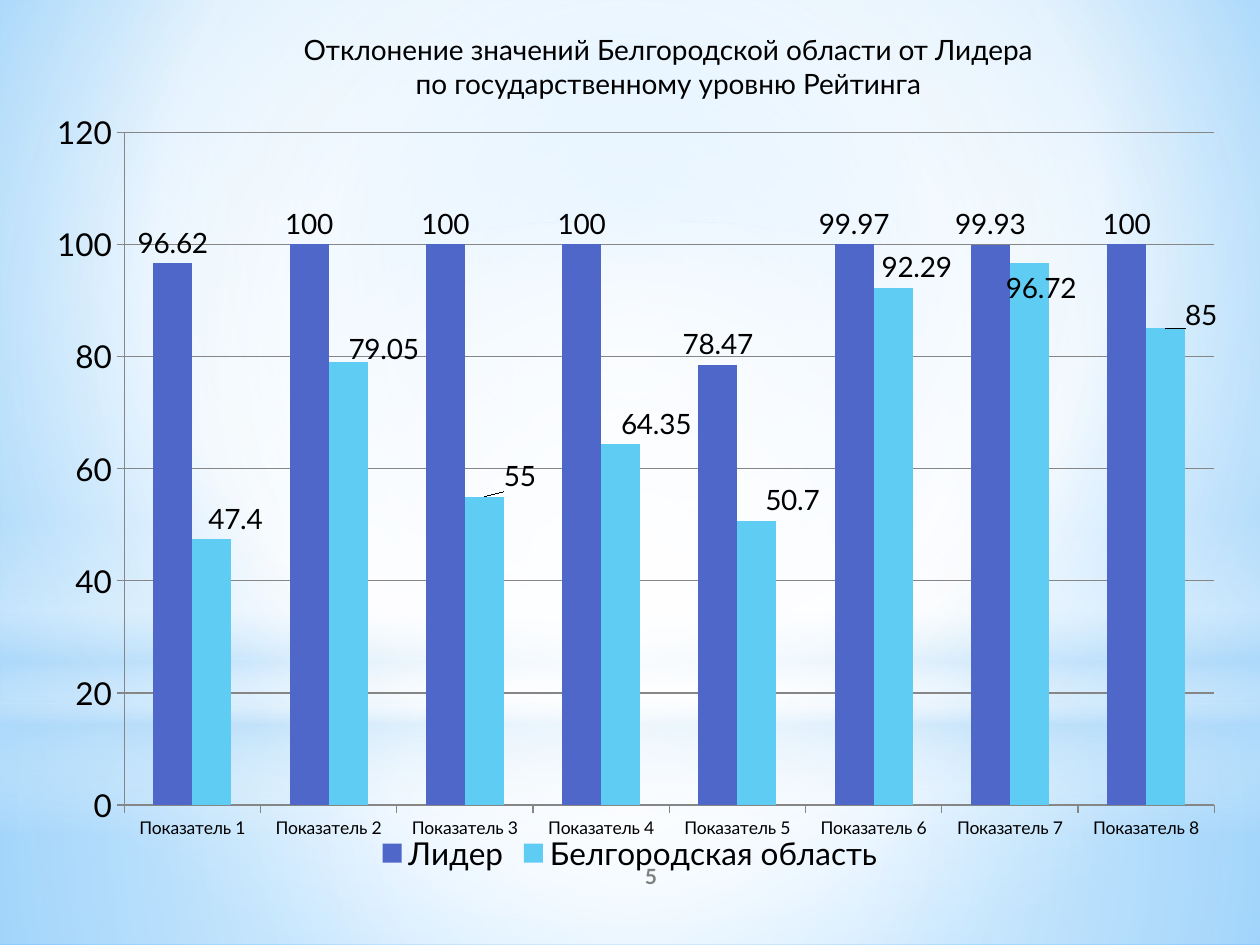
"""Build a slide comparing the region with the rating leader in a column chart."""
from lxml.etree import SubElement
from pptx import Presentation
from pptx.chart.data import CategoryChartData
from pptx.dml.color import RGBColor
from pptx.enum.chart import XL_CHART_TYPE as ChartType, XL_LABEL_POSITION as LabelPosition
from pptx.enum.chart import XL_LEGEND_POSITION as LegendPosition, XL_TICK_MARK as TickMark
from pptx.enum.shapes import MSO_SHAPE as Preset
from pptx.enum.text import MSO_ANCHOR as Anchor, MSO_AUTO_SIZE as AutoSize, PP_ALIGN as Align
from pptx.oxml.ns import qn
from pptx.util import Pt

WIDTH, HEIGHT = 720, 540
CENTRE = (50, 50, 50, 50)
LEADER = [96.62, 100, 100, 100, 78.47, 99.97, 99.93, 100]
REGION = [47.4, 79.05, 55, 64.35, 50.7, 92.29, 96.72, 85]
REGION_LABEL_SHIFTS = [(0.02, 0), (0.03, 0.01), (0.03, 0), (0.03, 0),
                       (0.03, 0), (0.02, 0), (0.01, 0.06), (0.03, 0.01)]


def colour(value):
    return RGBColor.from_string(value)


def add_node(parent, tag, **attributes):
    return SubElement(parent, qn(tag), {key: str(value) for key, value in attributes.items()})


def replace_with_gradient(owner, stops, focus=None):
    solid = owner.find(qn("a:solidFill"))
    gradient = add_node(owner, "a:gradFill", rotWithShape=1)
    owner.replace(solid, gradient)
    stop_list = add_node(gradient, "a:gsLst")
    for position, value, opacity in stops:
        stop = add_node(stop_list, "a:gs", pos=position * 1000)
        tint = add_node(stop, "a:srgbClr", val=value)
        if opacity < 100:
            add_node(tint, "a:alpha", val=opacity * 1000)
    if focus:
        sides = {side: amount * 1000 for side, amount in zip("ltrb", focus)}
        add_node(add_node(gradient, "a:path", path="circle"), "a:fillToRect", **sides)
    else:
        add_node(gradient, "a:lin", ang=90 * 60000, scaled=0)


def add_manual_layout(predecessor, **settings):
    layout = add_node(predecessor.getparent(), "c:layout")
    manual = add_node(layout, "c:manualLayout")
    for name, value in settings.items():
        add_node(manual, f"c:{name}", val=value)
    return layout


class SlideBuilder:
    font_name = "Lato"
    text_colour = "000000"
    line_colour = "868686"

    def __init__(self, presentation):
        self.slide = presentation.slides.add_slide(presentation.slide_layouts[5])

    def style(self, font, size, value=text_colour, bold=False):
        font.name, font.size, font.bold = self.font_name, Pt(size), bold
        font.color.rgb = colour(value)

    def background(self, stops, focus):
        self.slide.background.fill.solid()
        replace_with_gradient(self.slide.element.xpath(".//p:bgPr")[0], stops, focus)

    def glow(self, preset, top, height, stops, focus=None):
        shape = self.slide.shapes.add_shape(preset, 0, Pt(top), Pt(WIDTH), Pt(height))
        shape.shadow.inherit = False
        shape.line.fill.background()
        shape.fill.solid()
        replace_with_gradient(shape.element.spPr, stops, focus)

    def fill_text(self, shape, lines, anchor, size, **style):
        frame = shape.text_frame
        frame.word_wrap, frame.auto_size = True, AutoSize.NONE
        frame.vertical_anchor = anchor
        frame.text = "\n".join(lines)
        for paragraph in frame.paragraphs:
            paragraph.alignment = Align.CENTER
            self.style(paragraph.font, size, **style)

    def title(self, lines, left, top, width, height):
        title = self.slide.shapes.title
        title.left, title.top, title.width, title.height = map(Pt, (left, top, width, height))
        title.element.getparent().append(title.element)
        self.fill_text(title, lines, Anchor.TOP, 16)

    def page_number(self, number, left, top, width, height):
        box = self.slide.shapes.add_textbox(*map(Pt, (left, top, width, height)))
        self.fill_text(box, [number], Anchor.MIDDLE, 12, value="808080", bold=True)

    def axis(self, axis, size):
        axis.major_tick_mark, axis.minor_tick_mark = TickMark.OUTSIDE, TickMark.NONE
        self.style(axis.tick_labels.font, size)
        self.line(axis.format.line)

    def line(self, line):
        line.color.rgb = colour(self.line_colour)
        line.width = Pt(0.75)

    def column_chart(self, left, top, width, height, series_values, colours):
        data = CategoryChartData()
        data.categories = [f"Показатель {number}" for number in range(1, 9)]
        for name, values in series_values.items():
            data.add_series(name, values)
        chart = self.slide.shapes.add_chart(
            ChartType.COLUMN_CLUSTERED, *map(Pt, (left, top, width, height)), data).chart
        self.style(chart.font, 18)
        chart.has_title = False
        chart.has_legend = True
        chart.legend.position = LegendPosition.BOTTOM
        chart.legend.include_in_layout = False
        self.style(chart.legend.font, 18)
        self.axis(chart.category_axis, 10)
        values_axis = chart.value_axis
        self.axis(values_axis, 18)
        values_axis.minimum_scale, values_axis.maximum_scale = 0, 120
        values_axis.major_unit = 20
        values_axis.tick_labels.number_format = "#,##0"
        values_axis.tick_labels.number_format_is_linked = False
        self.line(values_axis.major_gridlines.format.line)
        plot = chart.plots[0]
        plot.gap_width, plot.overlap, plot.vary_by_categories = 150, 0, False
        for series, value in zip(plot.series, colours):
            series.format.fill.solid()
            series.format.fill.fore_color.rgb = colour(value)
            series.invert_if_negative = False
            labels = series.data_labels
            labels.show_value, labels.position = True, LabelPosition.OUTSIDE_END
            self.style(labels.font, 16)
        plot_area = chart.element.xpath(".//c:plotArea")[0]
        for layout in plot_area.findall(qn("c:layout")):
            plot_area.remove(layout)
        plot_area.insert(0, add_manual_layout(
            plot_area[0], layoutTarget="inner", xMode="edge", yMode="edge",
            x=0.075, y=0.033, w=0.916, h=0.872))
        return chart

    def shift_labels(self, chart, series, shifts):
        for index in range(len(shifts)):
            label = series.points[index].data_label
            label.position = LabelPosition.OUTSIDE_END
            self.style(label.font, 16)
        for position, (x, y) in zip(chart.element.xpath(".//c:dLbl/c:idx"), shifts):
            position.addnext(add_manual_layout(position, x=x, y=y))


def main():
    presentation = Presentation()
    presentation.slide_width, presentation.slide_height = Pt(WIDTH), Pt(HEIGHT)
    builder = SlideBuilder(presentation)
    builder.background([(0, "9ED5FF", 100), (60, "FFFFFF", 100), (100, "5BB9FF", 100)],
                       (20, 10, 20, 60))
    builder.glow(Preset.RECTANGLE, 402, 138,
                 [(0, "FFFFFF", 91), (37, "FFFFFF", 76), (100, "B4DCFA", 79)], CENTRE)
    builder.glow(Preset.RECTANGLE, 0, 402,
                 [(0, "FFFFFF", 89), (48, "FFFFFF", 62), (100, "B4DCFA", 79)], CENTRE)
    builder.glow(Preset.RECTANGLE, 297, 180,
                 [(0, "FFFFFF", 0), (29, "FFFFFF", 30), (45, "B4DCFA", 40),
                  (55, "FFFFFF", 26), (65, "B4DCFA", 60), (100, "FFFFFF", 0)])
    builder.glow(Preset.OVAL, 126, 402, [(0, "FFFFFF", 100), (56, "FFFFFF", 0)], CENTRE)
    chart = builder.column_chart(
        20, 61, 680, 441, {"Лидер": LEADER, "Белгородская область": REGION},
        ["4E67C8", "5ECCF3"])
    builder.shift_labels(chart, chart.plots[0].series[1], REGION_LABEL_SHIFTS)
    builder.title(["Отклонение значений Белгородской области от Лидера",
                   "по государственному уровню Рейтинга"], 70, 15, 624, 46)
    builder.page_number("5", 300, 486, 144, 29)
    presentation.save("out.pptx")


if __name__ == "__main__":
    main()
